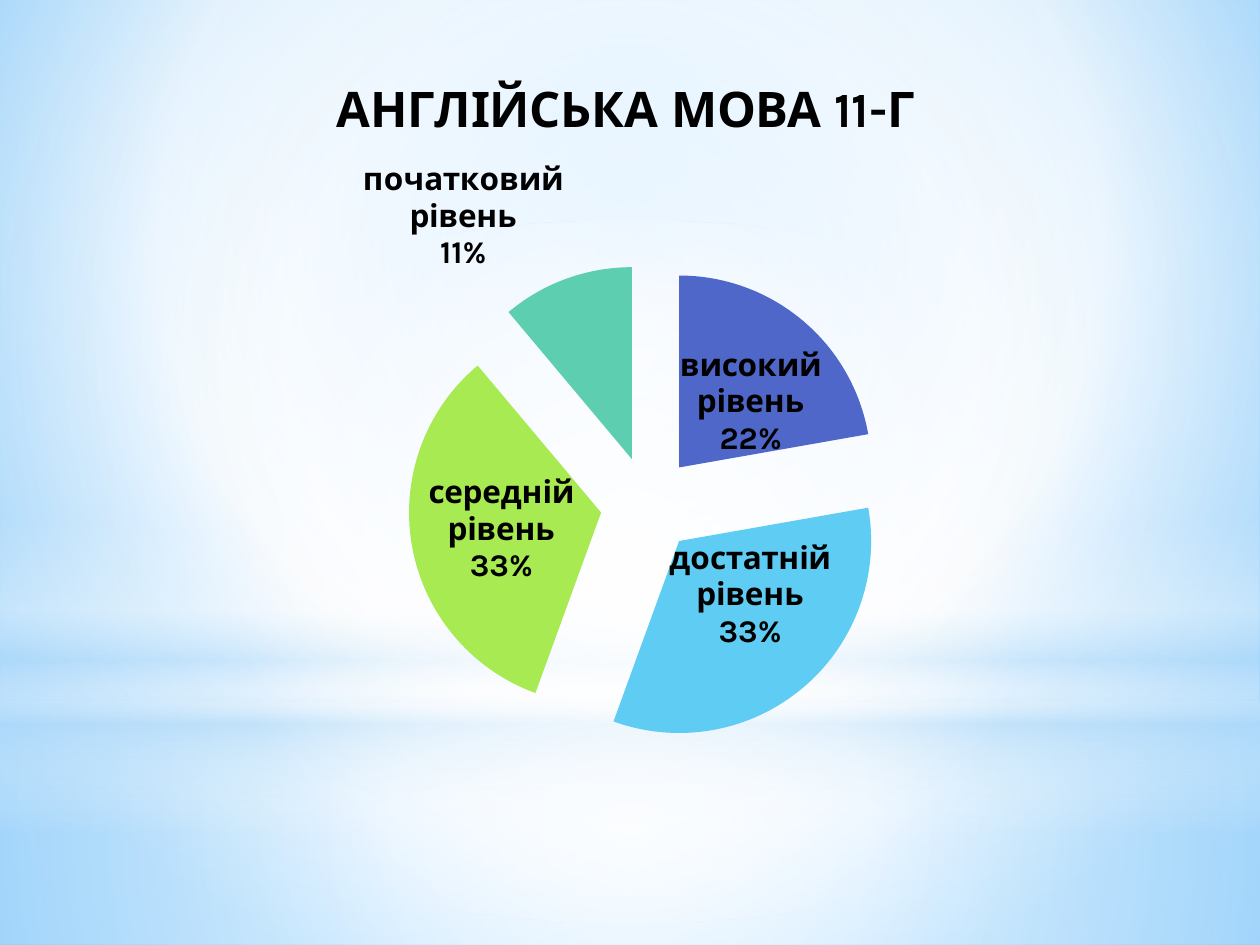
from lxml import etree
from pptx import Presentation
from pptx.chart.data import CategoryChartData
from pptx.dml.color import RGBColor
from pptx.enum import chart as charts, shapes
from pptx.oxml import parse_xml
from pptx.oxml.ns import nsdecls, qn
from pptx.util import Cm, Pt

BLACK = RGBColor(0x00, 0x00, 0x00)
FONT = "Karla"
TITLE = "АНГЛІЙСЬКА МОВА 11-Г"
LEVELS = [  # category, value, colour
    ("високий рівень", 22, RGBColor(0x4E, 0x67, 0xC8)),
    ("достатній рівень", 33, RGBColor(0x5E, 0xCC, 0xF3)),
    ("середній рівень", 33, RGBColor(0xA7, 0xEA, 0x52)),
    ("початковий рівень", 11, RGBColor(0x5D, 0xCE, 0xAF)),
]
EXPLOSION = 25
PLOT_LAYOUT = {"x": 0.31, "y": 0.27, "w": 0.42, "h": 0.61}

WHITE = RGBColor(0xFF, 0xFF, 0xFF)
PALE = RGBColor(0xB4, 0xDC, 0xFA)
SKY = RGBColor(0x9E, 0xD5, 0xFF)
BLUE = RGBColor(0x5B, 0xB9, 0xFF)
CENTRE = (50, 50, 50, 50)
BACKGROUND = [(0, SKY, 100), (60, WHITE, 100), (100, BLUE, 100)]
RECT, OVAL = shapes.MSO_SHAPE.RECTANGLE, shapes.MSO_SHAPE.OVAL
GLOWS = [  # shape, top, height, stops (position, colour, opacity), focus
    (RECT, 14.17, 4.88, [(0, WHITE, 91), (37, WHITE, 76), (100, PALE, 79)], CENTRE),
    (RECT, 0, 14.17, [(0, WHITE, 89), (48, WHITE, 62), (100, PALE, 79)], CENTRE),
    (RECT, 10.46, 6.35, [(0, WHITE, 0), (29, WHITE, 30), (45, PALE, 40),
                         (55, WHITE, 26), (65, PALE, 60), (100, WHITE, 0)], None),
    (OVAL, 4.45, 14.17, [(0, WHITE, 100), (56, WHITE, 0)], CENTRE),
]


def set_gradient(fill, owner, stops, focus):
    """Fill with stops: circular around focus, or downwards without one."""
    fill.gradient()
    stop_xml = "".join(
        f'<a:gs pos="{pos * 1000}"><a:srgbClr val="{colour}">'
        f'<a:alpha val="{opacity * 1000}"/></a:srgbClr></a:gs>'
        for pos, colour, opacity in stops)
    if focus:
        sides = " ".join(f'{side}="{value * 1000}"' for side, value in zip("ltrb", focus))
        direction = f'<a:path path="circle"><a:fillToRect {sides}/></a:path>'
    else:
        direction = '<a:lin ang="5400000" scaled="0"/>'
    old = owner.find(".//" + qn("a:gradFill"))
    old.getparent().replace(old, parse_xml(
        f'<a:gradFill {nsdecls("a")} rotWithShape="1">'
        f"<a:gsLst>{stop_xml}</a:gsLst>{direction}</a:gradFill>"))


def style_font(font, size, bold):
    font.name, font.size, font.bold = FONT, Pt(size), bold
    font.color.rgb = BLACK


def place_plot(chart):
    plot_area = chart.element.find(".//" + qn("c:plotArea"))
    layout = plot_area.find(qn("c:layout"))
    if layout is None:
        layout = etree.Element(qn("c:layout"))
        plot_area.insert(0, layout)
    manual = etree.SubElement(layout, qn("c:manualLayout"))
    settings = {"layoutTarget": "inner", "xMode": "edge", "yMode": "edge", **PLOT_LAYOUT}
    for name, value in settings.items():
        etree.SubElement(manual, qn("c:" + name)).set("val", str(value))


def add_pie(slide):
    data = CategoryChartData()
    data.categories = [name for name, _, _ in LEVELS]
    data.add_series("Series 1", [value for _, value, _ in LEVELS])
    chart = slide.shapes.add_chart(charts.XL_CHART_TYPE.PIE, Cm(1.09), Cm(0.91),
                                   Cm(23.04), Cm(16.1), data).chart
    style_font(chart.font, 10, False)
    chart.has_legend = False
    chart.has_title = True
    chart.chart_title.include_in_layout = False
    span = chart.chart_title.text_frame.paragraphs[0].add_run()
    span.text = TITLE
    style_font(span.font, 28, True)
    place_plot(chart)

    plot = chart.plots[0]
    plot.vary_by_categories = True
    series = plot.series[0]
    explosion = etree.Element(qn("c:explosion"))
    explosion.set("val", str(EXPLOSION))
    series._element.find(qn("c:tx")).addnext(explosion)
    for index, (_, _, colour) in enumerate(LEVELS):
        fill = series.points[index].format.fill
        fill.solid()
        fill.fore_color.rgb = colour

    labels = series.data_labels
    style_font(labels.font, 18, True)
    labels.show_category_name = labels.show_percentage = True
    labels.show_value = False
    labels.number_format, labels.number_format_is_linked = "0%", False
    labels.position = charts.XL_LABEL_POSITION.BEST_FIT
    separator = etree.Element(qn("c:separator"))
    separator.text = "\n"
    labels._element.find(qn("c:showBubbleSize")).addnext(separator)


deck = Presentation()
deck.slide_width, deck.slide_height = Cm(25.4), Cm(19.05)
slide = deck.slides.add_slide(deck.slide_layouts[6])
set_gradient(slide.background.fill, slide.element, BACKGROUND, (20, 10, 20, 60))
for kind, top, height, stops, focus in GLOWS:
    glow = slide.shapes.add_shape(kind, 0, Cm(top), deck.slide_width, Cm(height))
    glow.shadow.inherit = False
    glow.line.fill.background()
    set_gradient(glow.fill, glow.element, stops, focus)
add_pie(slide)
deck.save("out.pptx")
